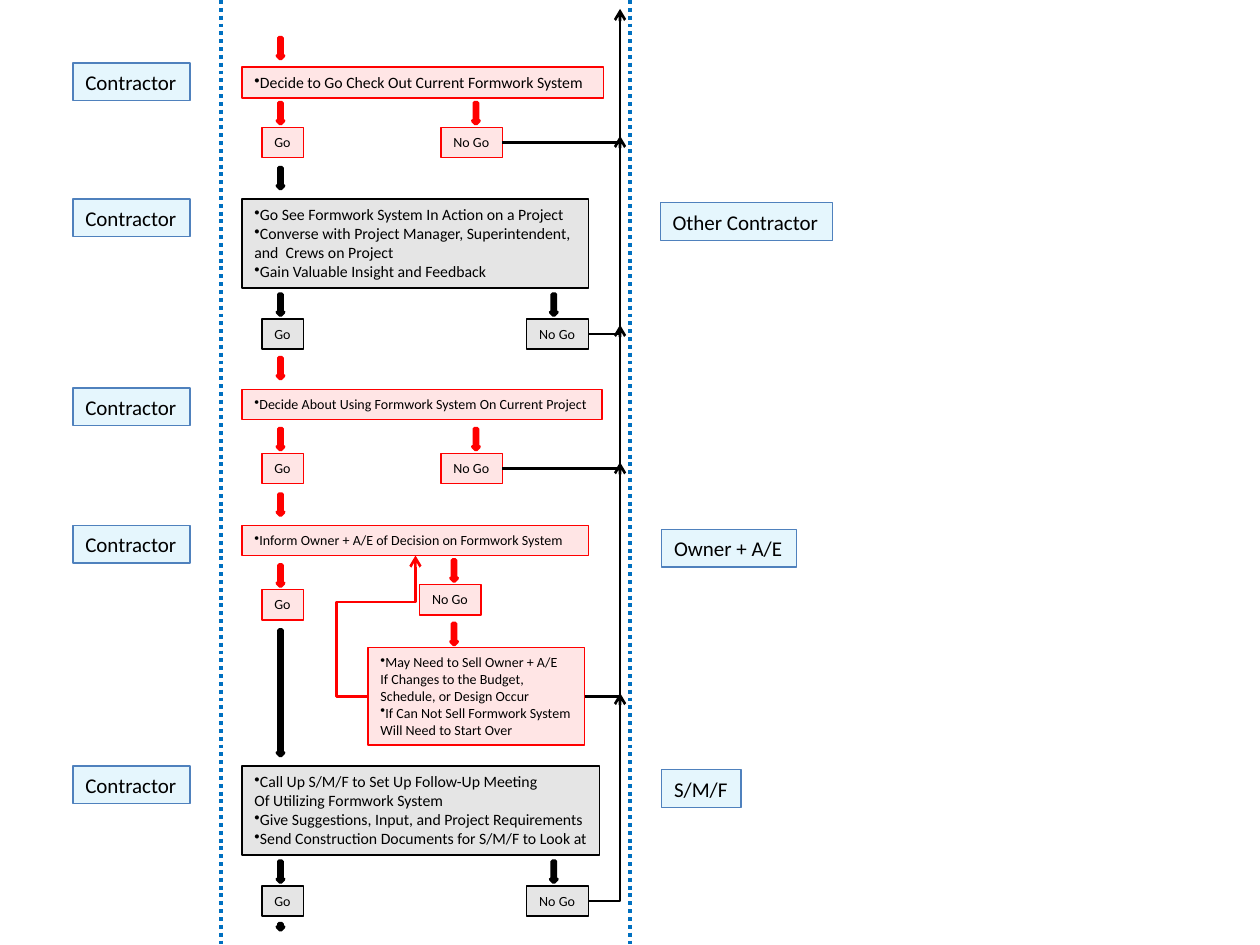
from pptx import Presentation
from pptx.dml.color import RGBColor
from pptx.enum.dml import MSO_LINE
from pptx.enum.shapes import MSO_CONNECTOR as Link, MSO_SHAPE as Preset
from pptx.enum.text import MSO_AUTO_SIZE as AutoSize
from pptx.oxml.ns import qn
from pptx.util import Cm, Pt
from lxml.etree import SubElement

RED, BLACK, SKY, STEEL, BLUE = "FF0000", "000000", "00B0F0", "4F81BD", "0070C0"
STEP_LEFT, GO_LEFT, ARROW_LEFT = 4.88, 5.28, 5.59
RETURN_X = 12.5


def rgb(code):
    return RGBColor.from_string(code)


def add_box(shapes, left, top, width, height, lines, size, tint, outline=None):
    """Lightly tinted box; a line starting with • becomes a bullet."""
    box = shapes.add_textbox(Cm(left), Cm(top), Cm(width), Cm(height))
    box.fill.solid()
    box.fill.fore_color.rgb = rgb(tint)
    tint_element = box.element.spPr.find(qn("a:solidFill"))[0]
    SubElement(tint_element, qn("a:alpha"), val="10000")
    box.line.color.rgb = rgb(outline or tint)
    box.line.width = Pt(0.75)
    frame = box.text_frame
    frame.word_wrap = False
    frame.auto_size = AutoSize.SHAPE_TO_FIT_TEXT
    for number, line in enumerate(lines):
        paragraph = frame.add_paragraph() if number else frame.paragraphs[0]
        paragraph.text = line.removeprefix("•")
        paragraph.font.size = Pt(size)
        paragraph.font.name = "Calibri"
        paragraph.font.color.rgb = rgb(BLACK)
        if line.startswith("•"):
            SubElement(paragraph._p.get_or_add_pPr(), qn("a:buChar"), char="•")
            # The bullet must come before the default run properties
            properties = paragraph._p.pPr
            properties.insert(0, properties.find(qn("a:buChar")))
    return box


def add_party(shapes, name, left, top, width):
    add_box(shapes, left, top, width, 0.76, [name], 12, SKY, STEEL)


def add_arrow(shapes, top, color, left=ARROW_LEFT, height=0.43):
    arrow = shapes.add_shape(Preset.DOWN_ARROW, Cm(left), Cm(top), Cm(0.13), Cm(height))
    arrow.shadow.inherit = False
    arrow.fill.solid()
    arrow.fill.fore_color.rgb = rgb(color)
    arrow.line.color.rgb = rgb(color)
    arrow.line.width = Pt(2)


def add_answer(shapes, word, left, top, width, arrow_left, color):
    """Go or No Go box with the arrow leading into it."""
    add_arrow(shapes, top - 0.5, color, arrow_left)
    return add_box(shapes, left, top, width, 0.61, [word], 8, color)


def finish_line(line, color, width):
    line.line.color.rgb = rgb(color)
    line.line.width = Pt(width)
    SubElement(line.element.spPr, qn("a:effectLst"))


def add_divider(shapes, x):
    divider = shapes.add_connector(Link.STRAIGHT, Cm(x), 0, Cm(x), Cm(19.05))
    divider.line.dash_style = MSO_LINE.ROUND_DOT
    finish_line(divider, BLUE, 2.25)


def add_bent_arrow(shapes, start, end, preset, color, adjustments=()):
    bent = shapes.add_connector(Link.ELBOW, *start, *end)
    geometry = bent.element.spPr.find(qn("a:prstGeom"))
    geometry.set("prst", preset)
    guides = geometry.find(qn("a:avLst"))
    for number, value in enumerate(adjustments, 1):
        SubElement(guides, qn("a:gd"), name=f"adj{number}", fmla=f"val {value}")
    finish_line(bent, color, 1.5)
    SubElement(bent.line._get_or_add_ln(), qn("a:tailEnd"), type="arrow")
    return bent


def add_return(shapes, box, end_y):
    """Way back to the start: right out of a box, then up."""
    start = box.left + box.width, box.top + box.height // 2
    end = Cm(RETURN_X), Cm(end_y)
    add_bent_arrow(shapes, start, end, "bentConnector2", BLACK)


def main():
    deck = Presentation()
    deck.slide_width, deck.slide_height = Cm(25.4), Cm(19.05)
    shapes = deck.slides.add_slide(deck.slide_layouts[6]).shapes

    # Lane dividers and the parties on both sides
    for x in (12.7, 4.45):
        add_divider(shapes, x)
    for top in (1.27, 4.01, 7.82, 10.59, 15.44):
        add_party(shapes, "Contractor", 1.47, top, 2.36)
    add_party(shapes, "Other Contractor", 13.31, 4.09, 3.48)
    add_party(shapes, "Owner + A/E", 13.34, 10.67, 2.72)
    add_party(shapes, "S/M/F", 13.34, 15.52, 1.6)

    # Steps: top, width, height, text size, colour, lines
    steps = [
        (1.35, 7.29, 0.63, 9, RED, ["•Decide to Go Check Out Current Formwork System"]),
        (4.01, 6.99, 1.8, 9, BLACK, [
            "•Go See Formwork System In Action on a Project",
            "•Converse with Project Manager, Superintendent,",
            "and  Crews on Project",
            "•Gain Valuable Insight and Feedback"]),
        (7.85, 7.26, 0.61, 8, RED, ["•Decide About Using Formwork System On Current Project"]),
        (10.59, 6.99, 0.61, 8, RED, ["•Inform Owner + A/E of Decision on Formwork System"]),
        (15.44, 7.21, 1.8, 9, BLACK, [
            "•Call Up S/M/F to Set Up Follow-Up Meeting",
            "Of Utilizing Formwork System",
            "•Give Suggestions, Input, and Project Requirements",
            "•Send Construction Documents for S/M/F to Look at"]),
    ]
    boxes = [add_box(shapes, STEP_LEFT, top, width, height, lines, size, color)
             for top, width, height, size, color, lines in steps]
    inform = boxes[3]

    # Arrows between the steps
    for top, color in ((0.76, RED), (3.38, BLACK), (7.21, RED), (9.96, RED)):
        add_arrow(shapes, top, color)
    add_arrow(shapes, 12.7, BLACK, height=2.54)
    add_arrow(shapes, 18.62, BLACK, height=0.13)

    # Answers: Go top, No Go top, No Go left, its arrow, colour, end of the way back
    answers = [
        (2.57, 2.57, 8.89, 9.53, RED, 0.18),
        (6.43, 6.43, 10.62, 11.1, BLACK, 2.74),
        (9.14, 9.14, 8.89, 9.53, RED, 6.55),
        (11.89, 11.79, 8.46, 9.09, RED, None),
        (17.86, 17.86, 10.62, 11.1, BLACK, 13.97),
    ]
    for go_top, no_go_top, no_go_left, arrow_left, color, end_y in answers:
        add_answer(shapes, "Go", GO_LEFT, go_top, 0.84, ARROW_LEFT, color)
        no_go = add_answer(shapes, "No Go", no_go_left, no_go_top, 1.24, arrow_left, color)
        if end_y is not None:
            add_return(shapes, no_go, end_y)

    # Selling to the owner, with the loop back to informing
    add_arrow(shapes, 12.57, RED, 9.09)
    sell = add_box(shapes, 7.42, 13.06, 4.37, 1.96, [
        "•May Need to Sell Owner + A/E",
        "If Changes to the Budget,",
        "Schedule, or Design Occur",
        "•If Can Not Sell Formwork System",
        "Will Need to Start Over"], 8, RED)
    add_return(shapes, sell, 9.32)
    sell_side = sell.left, sell.top + sell.height // 2
    inform_base = inform.left + inform.width // 2, inform.top + inform.height
    add_bent_arrow(shapes, sell_side, inform_base, "bentConnector4", RED, (-66700, 67100))

    deck.save("out.pptx")


if __name__ == "__main__":
    main()
